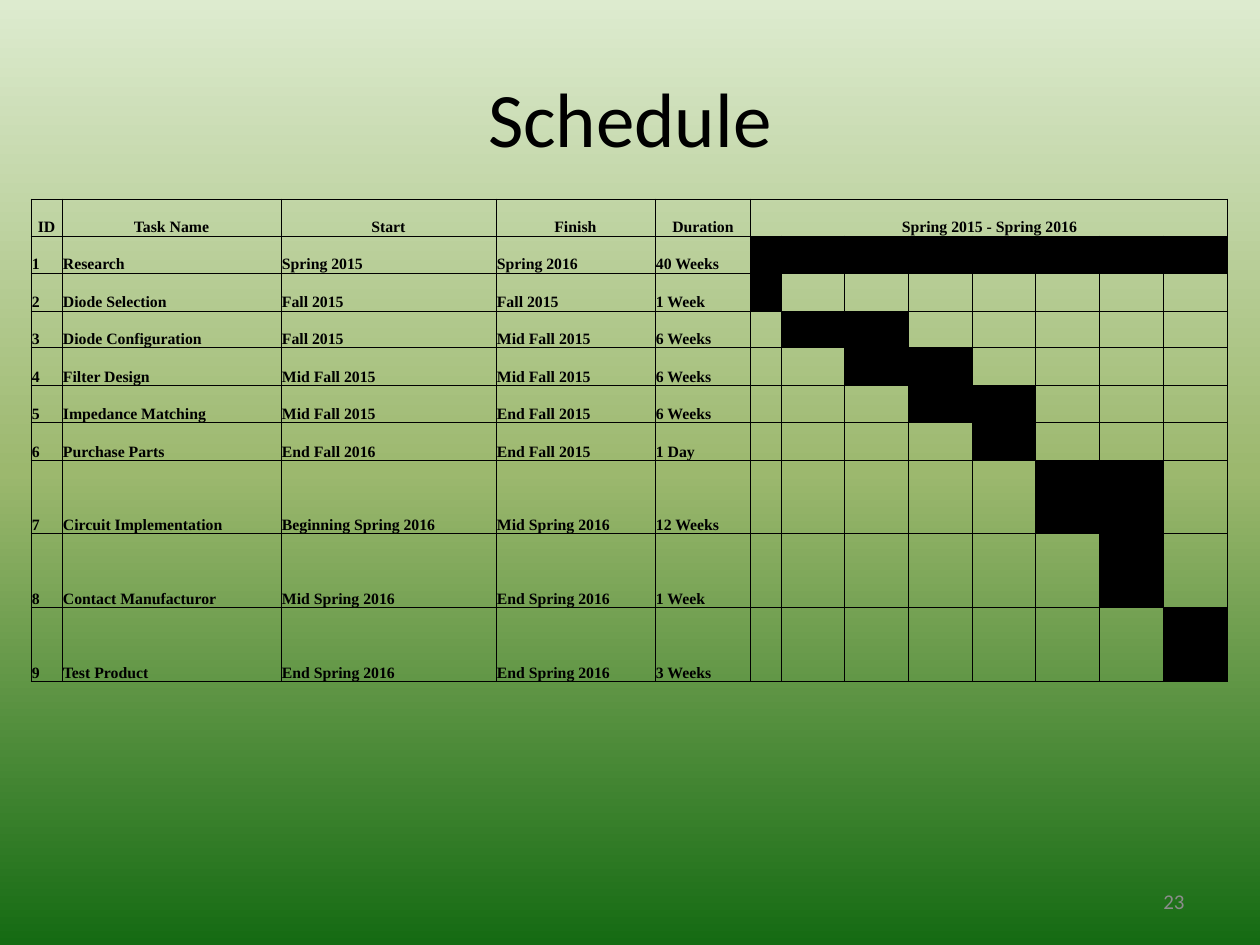
"""Build a project schedule slide with a task table and Gantt bars."""
from lxml.etree import SubElement
from pptx import Presentation
from pptx.dml.color import RGBColor
from pptx.enum.text import MSO_ANCHOR as Anchor, PP_ALIGN as Align
from pptx.oxml.ns import qn
from pptx.util import Pt

PX = 914400 / 126
COLORS = {"ink": "000000", "number": "8C8C8C",
          "top": "DDEBCF", "middle": "9CB86E", "bottom": "156B13"}
HEADINGS = ["ID", "Task Name", "Start", "Finish", "Duration", "Spring 2015 - Spring 2016"]
TASKS = [
    ("Research", "Spring 2015", "Spring 2016", "40 Weeks", range(0, 8)),
    ("Diode Selection", "Fall 2015", "Fall 2015", "1 Week", range(0, 1)),
    ("Diode Configuration", "Fall 2015", "Mid Fall 2015", "6 Weeks", range(1, 3)),
    ("Filter Design", "Mid Fall 2015", "Mid Fall 2015", "6 Weeks", range(2, 4)),
    ("Impedance Matching", "Mid Fall 2015", "End Fall 2015", "6 Weeks", range(3, 5)),
    ("Purchase Parts", "End Fall 2016", "End Fall 2015", "1 Day", range(4, 5)),
    ("Circuit Implementation", "Beginning Spring 2016", "Mid Spring 2016", "12 Weeks",
     range(5, 7)),
    ("Contact Manufacturor", "Mid Spring 2016", "End Spring 2016", "1 Week", range(6, 7)),
    ("Test Product", "End Spring 2016", "End Spring 2016", "3 Weeks", range(7, 8)),
]


def px(length):
    return round(length * PX)


def split(total, count):
    return [total * (i + 1) // count - total * i // count for i in range(count)]


class Deck:
    def __init__(self, width, height):
        self.prs = Presentation()
        self.prs.slide_width, self.prs.slide_height = px(width), px(height)
        self.slide = self.prs.slides.add_slide(self.prs.slide_layouts[6])

    def background(self, *names):
        fill = self.slide.background.fill
        fill.gradient()
        fill.gradient_angle = 270
        stops = self.slide.background._cSld.find(".//" + qn("a:gsLst"))
        for stop in list(stops):
            stops.remove(stop)
        for i, name in enumerate(names):
            stop = SubElement(stops, qn("a:gs"), pos=str(100000 * i // (len(names) - 1)))
            SubElement(stop, qn("a:srgbClr"), val=COLORS[name])

    def add_words(self, paragraph, words, size, align, face="Calibri", color="ink", bold=False):
        paragraph.alignment = align
        run = paragraph.add_run()
        run.text = words
        run.font.name, run.font.size, run.font.bold = face, Pt(size), bold
        run.font.color.rgb = RGBColor.from_string(COLORS[color])

    def text(self, box, words, size, align, color="ink"):
        frame = self.slide.shapes.add_textbox(*map(px, box)).text_frame
        frame.word_wrap = True
        frame.vertical_anchor = Anchor.MIDDLE
        self.add_words(frame.paragraphs[0], words, size, align, color=color)

    def table(self, left, top, columns, rows):
        grid = self.slide.shapes.add_table(
            len(rows), len(columns), px(left), px(top), px(sum(columns)), px(sum(rows))).table
        grid.first_row = grid.horz_banding = False
        for column, width in zip(grid.columns, columns):
            column.width = px(width)
        for row, height in zip(grid.rows, rows):
            row.height = px(height)
        for cell in grid.iter_cells():
            self.style_cell(cell)
        return grid

    def style_cell(self, cell):
        cell.margin_left = cell.margin_right = cell.margin_top = px(1)
        cell.margin_bottom = 0
        cell.vertical_anchor = Anchor.BOTTOM
        props = cell._tc.get_or_add_tcPr()
        for side in ("lnL", "lnR", "lnT", "lnB"):
            line = SubElement(props, qn("a:" + side), w=str(int(Pt(0.5))))
            SubElement(SubElement(line, qn("a:solidFill")), qn("a:srgbClr"), val=COLORS["ink"])
        cell.fill.background()
        SubElement(cell.text_frame.paragraphs[0]._p, qn("a:endParaRPr"), sz="900")

    def cell_text(self, cell, words, align=Align.LEFT):
        self.add_words(cell.text_frame.paragraphs[0], words, 9, align, "Times New Roman",
                       bold=True)

    def bar(self, cell):
        cell.fill.solid()
        cell.fill.fore_color.rgb = RGBColor.from_string(COLORS["ink"])


def main():
    deck = Deck(1260, 945)
    deck.background("top", "middle", "bottom")
    deck.text((63, 38, 1134, 157), "Schedule", 44, Align.CENTER)
    deck.text((903, 876, 294, 50), "23", 12, Align.RIGHT, "number")

    schedule = deck.table(31, 199, [31, 219, 215, 159, 96, 31] + split(446, 7),
                          split(262, 7) + split(221, 3))
    first_period = len(HEADINGS) - 1
    schedule.cell(0, first_period).merge(schedule.cell(0, len(schedule.columns) - 1))
    for column, heading in enumerate(HEADINGS):
        deck.cell_text(schedule.cell(0, column), heading, Align.CENTER)
    for number, (*details, periods) in enumerate(TASKS, 1):
        for column, words in enumerate([str(number), *details]):
            deck.cell_text(schedule.cell(number, column), words)
        for period in periods:
            deck.bar(schedule.cell(number, first_period + period))
    deck.prs.save("out.pptx")


if __name__ == "__main__":
    main()
